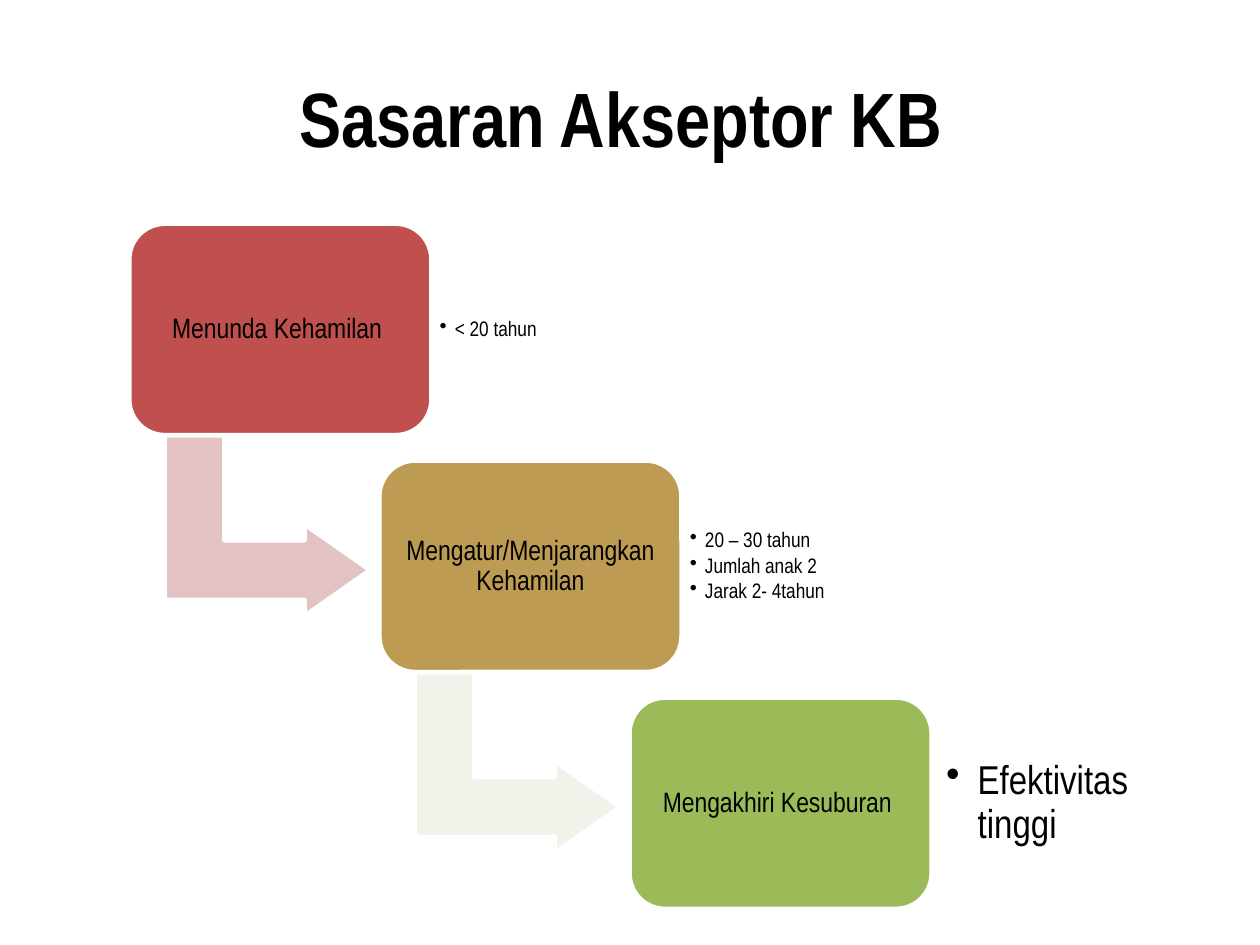
import pptx
import pptx.util
import pptx.dml.color
import pptx.enum.shapes
import pptx.enum.text
import pptx.oxml.ns
import lxml.etree

Inches, Pt = pptx.util.Inches, pptx.util.Pt
Kind = pptx.enum.shapes.MSO_SHAPE
Align = pptx.enum.text.PP_ALIGN
FONT = "Arial Narrow"

# Content: label, fill, arrow fill, points, point size, inset, indent
TITLE = "Sasaran Akseptor KB "
STEPS = [
    ("Menunda Kehamilan ", "C0504D", "E2C2C2",
     ["< 20 tahun"], 12, 0.07, 0.12),
    ("Mengatur/Menjarangkan Kehamilan", "BD9B53", "EFF3EA",
     ["20 – 30 tahun", "Jumlah anak 2", "Jarak 2- 4tahun"], 12, 0.07, 0.12),
    ("Mengakhiri Kesuburan ", "9BBB59", None,
     ["Efektivitas tinggi"], 23, 0.12, 0.25),
]

# Staircase layout
LEFT, TOP = 1.03, 1.78
STEP_X, STEP_Y = 1.985, 1.88
WIDE, HIGH = 2.39, 1.67


def color(code):
    return pptx.dml.color.RGBColor.from_string(code)


def add_block(kind, box, fill):
    shape = slide.shapes.add_shape(kind, *map(Inches, box))
    shape.shadow.inherit = False
    shape.fill.solid()
    shape.fill.fore_color.rgb = color(fill)
    shape.line.color.rgb = color("FFFFFF")
    shape.line.width = Pt(2)
    return shape


def add_bullet(para, indent):
    props = para._p.get_or_add_pPr()
    props.set("marL", str(Inches(indent)))
    props.set("indent", str(-Inches(indent)))
    mark = lxml.etree.SubElement(props, pptx.oxml.ns.qn("a:buChar"))
    mark.set("char", "•")


def set_text(shape, lines, size, inset, align, after=0, indent=0, bold=False):
    frame = shape.text_frame
    frame.text = "\n".join(lines)
    frame.word_wrap = True
    frame.vertical_anchor = pptx.enum.text.MSO_ANCHOR.MIDDLE
    frame.margin_left = frame.margin_right = Inches(inset)
    frame.margin_top = frame.margin_bottom = Inches(inset)
    for para in frame.paragraphs:
        para.alignment = align
        if after:
            para.line_spacing = 0.9
            para.space_after = Pt(size * after)
        if indent:
            add_bullet(para, indent)
        for run in para.runs:
            run.font.name = FONT
            run.font.size = Pt(size)
            run.font.bold = bold
            run.font.color.rgb = color("000000")


deck = pptx.Presentation()
deck.slide_width, deck.slide_height = Inches(10), Inches(7.5)
slide = deck.slides.add_slide(deck.slide_layouts[6])

# Title
head = slide.shapes.add_textbox(*map(Inches, (0.5, 0.3, 9, 1.25)))
set_text(head, [TITLE], 44, 0.1, Align.CENTER, bold=True)

# Steps, each with its arrow, box and points
for i, (label, fill, pale, points, size, inset, indent) in enumerate(STEPS):
    x, y = LEFT + i * STEP_X, TOP + i * STEP_Y
    if pale:
        arrow = add_block(Kind.BENT_UP_ARROW,
                          (x + 0.38, y + 1.58, 1.42, 1.62), pale)
        arrow.rotation = 90
        for n, part in enumerate((0.328, 0.25, 0.358)):
            arrow.adjustments[n] = part
    card = add_block(Kind.ROUNDED_RECTANGLE, (x, y, WIDE, HIGH), fill)
    set_text(card, [label], 16, 0.07, Align.CENTER, 0.35)
    note = slide.shapes.add_textbox(
        *map(Inches, (x + WIDE, y + 0.16, 1.74, 1.35)))
    set_text(note, points, size, inset, Align.LEFT, 0.15, indent)

deck.save("out.pptx")
